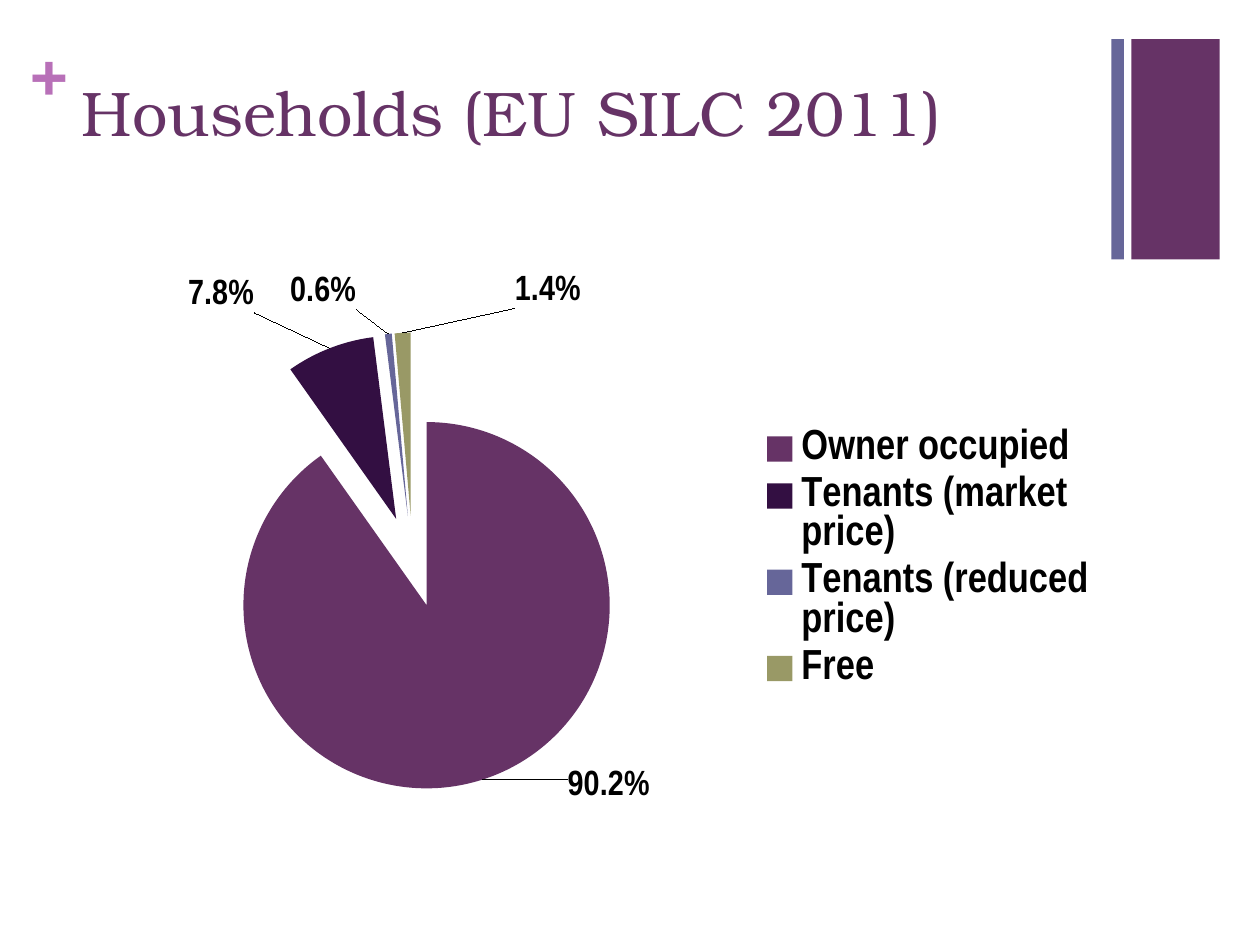
from copy import deepcopy

from pptx import Presentation
from pptx.chart.data import CategoryChartData
from pptx.dml.color import RGBColor
from pptx.enum.chart import XL_CHART_TYPE as ChartType, XL_LEGEND_POSITION as LegendPlace
from pptx.enum.shapes import MSO_SHAPE as Shape
from pptx.enum.text import MSO_ANCHOR as Anchor, PP_ALIGN as Align
from pptx.oxml import parse_xml
from pptx.oxml.ns import nsdecls, qn
from pptx.util import Inches, Pt

PLUM = RGBColor(0x66, 0x33, 0x66)
AUBERGINE = RGBColor(0x33, 0x0F, 0x42)
SLATE = RGBColor(0x66, 0x66, 0x99)
OLIVE = RGBColor(0x99, 0x99, 0x66)
ORCHID = RGBColor(0xB8, 0x70, 0xB8)
BLACK = RGBColor(0, 0, 0)
SERIF = "TeX Gyre Bonum"
NARROW = "Arial Narrow"

TENURES = [
    ("Owner occupied", 90.2, PLUM, (0.08, -0.03)),
    ("Tenants (market price)", 7.8, AUBERGINE, (-0.07, -0.05)),
    ("Tenants (reduced price)", 0.6, SLATE, (-0.03, -0.03)),
    ("Free", 1.4, OLIVE, (0.14, -0.03)),
]


def style_font(font, name, size, color, bold=False):
    """Set the face, size, colour and weight of a font."""
    font.name, font.size, font.bold = name, Pt(size), bold
    font.color.rgb = color


def add_bar(page, box, color):
    """Draw a plain decorative bar in the box."""
    bar = page.shapes.add_shape(Shape.RECTANGLE, *map(Inches, box))
    bar.shadow.inherit = False
    bar.fill.solid()
    bar.fill.fore_color.rgb = color
    bar.line.fill.background()


def add_plus(page, box):
    """Write the plus sign beside the title."""
    frame = page.shapes.add_textbox(*map(Inches, box)).text_frame
    frame.margin_left = frame.margin_right = frame.margin_top = frame.margin_bottom = 0
    frame.word_wrap = True
    span = frame.paragraphs[0].add_run()
    span.text = "+"
    style_font(span.font, SERIF, 36, ORCHID, True)


def place_title(page, box, text):
    """Move the title placeholder to the box and fill it."""
    title = page.shapes.title
    title.left, title.top, title.width, title.height = map(Inches, box)
    frame = title.text_frame
    frame.vertical_anchor = Anchor.TOP
    para = frame.paragraphs[0]
    para.alignment = Align.LEFT
    span = para.add_run()
    span.text = text
    style_font(span.font, SERIF, 36, PLUM)


def make_layout(x, y, width=None, height=None, inner=False):
    """Return a manual chart layout in fractions of the chart."""
    parts = [("layoutTarget", "inner")] if inner else []
    if width is not None:
        parts += [("xMode", "edge"), ("yMode", "edge")]
    parts += [("x", x), ("y", y)]
    if width is not None:
        parts += [("w", width), ("h", height)]
    body = "".join(f'<c:{tag} val="{value}"/>' for tag, value in parts)
    return parse_xml(f"<c:layout {nsdecls('c')}><c:manualLayout>{body}</c:manualLayout></c:layout>")


def set_layout(owner, layout, before):
    """Replace the layout of a chart part, ahead of the named child."""
    for old in owner.findall(qn("c:layout")):
        owner.remove(old)
    owner.find(qn(before)).addprevious(layout)


def label_slices(series):
    """Show percentages with leader lines, each label moved by its offset."""
    labels = series.data_labels
    labels.number_format, labels.number_format_is_linked = "0.0%", False
    style_font(labels.font, NARROW, 20, BLACK, True)
    labels.show_percentage, labels.show_value = True, False
    group = series._element.find(qn("c:dLbls"))
    shared = [deepcopy(group.find(qn(tag))) for tag in ("c:numFmt", "c:txPr")]
    flags = "".join(
        f'<c:{tag} val="{int(tag == "showPercent")}"/>'
        for tag in ("showLegendKey", "showVal", "showCatName", "showSerName", "showPercent", "showBubbleSize")
    )
    for index, (_, _, _, offset) in enumerate(TENURES):
        label = parse_xml(
            f'<c:dLbl {nsdecls("c")}><c:idx val="{index}"/><c:dLblPos val="bestFit"/>{flags}</c:dLbl>'
        )
        place = label.find(qn("c:dLblPos"))
        for part in [make_layout(*offset), *map(deepcopy, shared)]:
            place.addprevious(part)
        group.insert(index, label)
    for old in group.findall(qn("c:showLeaderLines")):
        group.remove(old)
    group.append(parse_xml(f'<c:showLeaderLines {nsdecls("c")} val="1"/>'))


def add_pie(page, box):
    """Add the exploded pie of tenure shares with its legend."""
    data = CategoryChartData()
    data.categories = [name for name, *_ in TENURES]
    data.add_series("Series 1", [share for _, share, *_ in TENURES])
    chart = page.shapes.add_chart(ChartType.PIE, *map(Inches, box), data).chart
    chart.has_title = False
    style_font(chart.font, SERIF, 18, BLACK)
    chart.plots[0].vary_by_categories = True
    series = chart.plots[0].series[0]
    for index, (_, _, color, _) in enumerate(TENURES):
        fill = series.points[index].format.fill
        fill.solid()
        fill.fore_color.rgb = color
        point = series._element.findall(qn("c:dPt"))[index]
        point.find(qn("c:spPr")).addprevious(parse_xml(f'<c:explosion {nsdecls("c")} val="25"/>'))
    series._element.find(qn("c:dPt")).addprevious(parse_xml(f'<c:explosion {nsdecls("c")} val="25"/>'))
    label_slices(series)
    chart.has_legend = True
    legend = chart.legend
    legend.position, legend.include_in_layout = LegendPlace.RIGHT, False
    style_font(legend.font, NARROW, 24, BLACK, True)
    set_layout(legend._element, make_layout(0.66, 0.26, 0.33, 0.48), "c:overlay")
    plot_area = chart._chartSpace.chart.plotArea
    set_layout(plot_area, make_layout(0.11, 0.1, 0.44, 0.81, True), "c:pieChart")


def main():
    """Build the households slide."""
    deck = Presentation()
    deck.slide_width, deck.slide_height = Inches(10), Inches(7.5)
    page = deck.slides.add_slide(deck.slide_layouts[5])
    add_bar(page, (8.98, 0.31, 0.7, 1.75), PLUM)
    add_bar(page, (8.82, 0.31, 0.1, 1.75), SLATE)
    add_plus(page, (0.24, 0.25, 0.29, 0.61))
    place_title(page, (0.55, 0.53, 8.26, 1.22), "Households (EU SILC 2011)")
    add_pie(page, (0.55, 2.17, 8.26, 4.53))
    deck.save("out.pptx")


if __name__ == "__main__":
    main()
